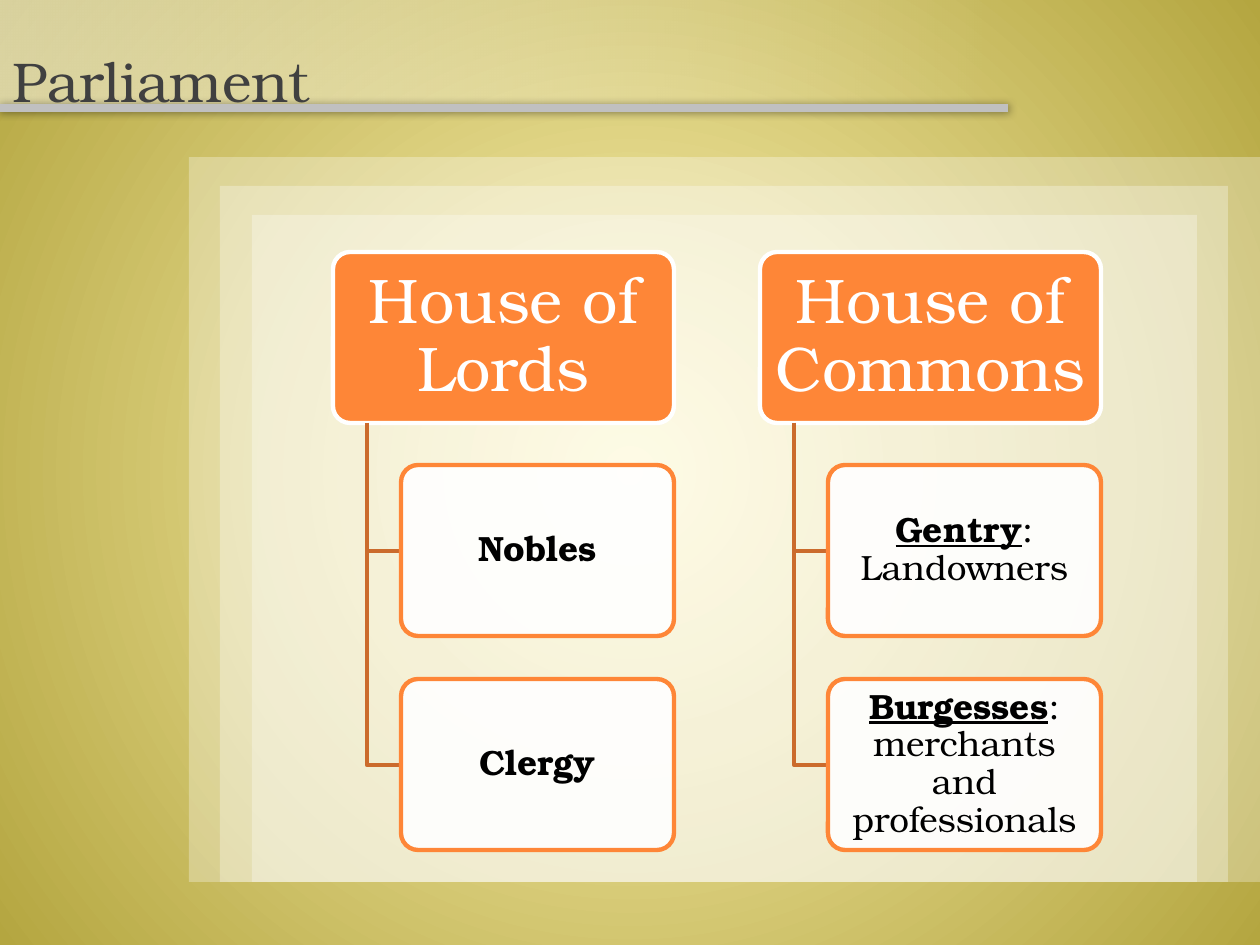
from dataclasses import dataclass

from lxml import etree
from pptx import Presentation
from pptx.dml.color import RGBColor
from pptx.enum.shapes import MSO_CONNECTOR, MSO_SHAPE
from pptx.enum.text import MSO_ANCHOR, MSO_AUTO_SIZE, PP_ALIGN
from pptx.oxml.ns import qn
from pptx.util import Emu, Pt

RECT, ROUND = MSO_SHAPE.RECTANGLE, MSO_SHAPE.ROUNDED_RECTANGLE
LINE = MSO_CONNECTOR.STRAIGHT
MIDDLE, BOTTOM = MSO_ANCHOR.MIDDLE, MSO_ANCHOR.BOTTOM
LEFT, CENTER = PP_ALIGN.LEFT, PP_ALIGN.CENTER
FIXED = MSO_AUTO_SIZE.NONE
SCALE = 914400 / 126


@dataclass(frozen=True)
class Theme:
    """Colours, font and type sizes of the slide."""
    font: str = "TeX Gyre Bonum"
    glow: str = "FFF5B6"
    edge: str = "B4A640"
    white: str = "FFFFFF"
    black: str = "000000"
    ink: str = "404040"
    rule: str = "C0C0C0"
    accent: str = "FE8637"
    stem: str = "CB6B2C"
    title: int = 32
    head: int = 36
    item: int = 20
    border: float = 2.5
    bar: float = 4.5


THEME = Theme()
HOUSES = [
    ("House of Lords", [[("Nobles", True, False)], [("Clergy", True, False)]]),
    ("House of Commons", [
        [("Gentry", True, True), (": Landowners", False, False)],
        [("Burgesses", True, True),
         (": merchants and professionals", False, False)],
    ]),
]


def px(num):
    """Turn pixels into EMU."""
    return Emu(round(num * SCALE))


def rgb(code):
    """Turn a hex code into a colour."""
    return RGBColor.from_string(code)


def add(node, tag, **attrs):
    """Append a child element with attributes."""
    return etree.SubElement(node, qn(tag), {k: str(v) for k, v in attrs.items()})


def blend(root, stops):
    """Empty the gradient under root and give it new stops."""
    grad = next(root.iter(qn("a:gradFill")))
    for child in list(grad):
        grad.remove(child)
    items = add(grad, "a:gsLst")
    for pos, code, alpha in stops:
        stop = add(items, "a:gs", pos=pos * 1000)
        add(add(stop, "a:srgbClr", val=code), "a:alpha", val=alpha * 1000)
    return grad


def paint(shape, code, alpha=100, line=None):
    """Set fill, transparency and outline, with no shadow."""
    shape.shadow.inherit = False
    shape.fill.solid()
    shape.fill.fore_color.rgb = rgb(code)
    if alpha < 100:
        color = next(shape.element.iter(qn("a:srgbClr")))
        add(color, "a:alpha", val=alpha * 1000)
    if line:
        stroke(shape, line, THEME.border)
    else:
        shape.line.fill.background()


def stroke(shape, code, width):
    """Set the line colour and width."""
    shape.line.color.rgb = rgb(code)
    shape.line.width = Pt(width)


def write(frame, runs, size, code, align, anchor):
    """Write one paragraph run by run."""
    frame.word_wrap = True
    frame.auto_size = FIXED
    frame.vertical_anchor = anchor
    para = frame.paragraphs[0]
    para.alignment = align
    for text, bold, under in runs:
        run = para.add_run()
        run.text = text
        font = run.font
        font.name, font.size = THEME.font, Pt(size)
        font.bold, font.underline = bold, under
        font.color.rgb = rgb(code)


def box(shapes, kind, x, y, w, h):
    """Add a preset shape at pixel lengths."""
    return shapes.add_shape(kind, px(x), px(y), px(w), px(h))


def backdrop(slide):
    """Fill the background with a radial gradient."""
    slide.background.fill.gradient()
    grad = blend(slide.element, [(0, THEME.glow, 100), (100, THEME.edge, 100)])
    ring = add(grad, "a:path", path="circle")
    add(ring, "a:fillToRect", l=50000, t=50000, r=50000, b=50000)


def panels(slide):
    """Add the nested translucent panels."""
    group = slide.shapes.add_group_shape().shapes
    for i in range(3):
        top = 157 + 29 * i
        panel = box(group, RECT, 189 + 63 * i // 2, top, 1071 - 63 * i, 882 - top)
        paint(panel, THEME.white, 30)


def banner(slide):
    """Add the fading band and the rule under the title."""
    band = box(slide.shapes, RECT, 451, -451, 107, 1008)
    band.rotation = 90
    paint(band, THEME.white)
    band.fill.gradient()
    grad = blend(band.element, [(0, THEME.white, 50), (100, THEME.white, 0)])
    add(grad, "a:lin", ang=270 * 60000, scaled=0)
    rule = slide.shapes.add_connector(LINE, px(1008), px(108), px(0), px(108))
    stroke(rule, THEME.rule, THEME.bar)
    glow = add(add(rule.element.spPr, "a:effectLst"), "a:outerShdw",
               blurRad=Pt(5), dist=0, dir=0, rotWithShape=0)
    add(add(glow, "a:srgbClr", val=THEME.black), "a:alpha", val=40000)


def card(shapes, x, y, w, runs, head=False):
    """Add a rounded card for a house or one of its members."""
    shape = box(shapes, ROUND, x, y, w, 171)
    shape.adjustments[0] = 0.1
    frame = shape.text_frame
    side, end = (9, 6) if head else (5, 4)
    frame.margin_left = frame.margin_right = px(side)
    frame.margin_top = frame.margin_bottom = px(end)
    if head:
        paint(shape, THEME.accent, line=THEME.white)
        write(frame, runs, THEME.head, THEME.white, CENTER, MIDDLE)
    else:
        paint(shape, THEME.white, 90, THEME.accent)
        write(frame, runs, THEME.item, THEME.black, CENTER, MIDDLE)
    frame.paragraphs[0].line_spacing = 0.9


def branch(shapes, x, top, low):
    """Add the bent line from a house to a member."""
    form = shapes.build_freeform(x, top, scale=SCALE)
    form.add_line_segments([(x, low), (x + 34, low)], close=False)
    shape = form.convert_to_shape()
    shape.shadow.inherit = False
    shape.fill.background()
    stroke(shape, THEME.stem, THEME.border)


def house(shapes, x, name, members):
    """Add a house with its members below."""
    top = 252
    card(shapes, x, top, 341, [(name, False, False)], head=True)
    for i, runs in enumerate(members, 1):
        y = top + 427 * i // 2
        branch(shapes, x + 34, top + 171, y + 86)
        card(shapes, x + 68, y, 273, runs)


def heading(slide, text):
    """Place the title on top of the band."""
    title = slide.shapes.title
    title.left, title.top = px(0), px(13)
    title.width, title.height = px(1008), px(107)
    write(title.text_frame, [(text, False, False)], THEME.title, THEME.ink,
          LEFT, BOTTOM)
    title.element.getparent().append(title.element)


def main():
    """Build and save the slide."""
    deck = Presentation()
    deck.slide_width, deck.slide_height = px(1260), px(945)
    slide = deck.slides.add_slide(deck.slide_layouts[5])
    backdrop(slide)
    panels(slide)
    banner(slide)
    chart = slide.shapes.add_group_shape().shapes
    for i, (name, members) in enumerate(HOUSES):
        house(chart, 333 + 427 * i, name, members)
    heading(slide, "Parliament")
    deck.save("out.pptx")


if __name__ == "__main__":
    main()
